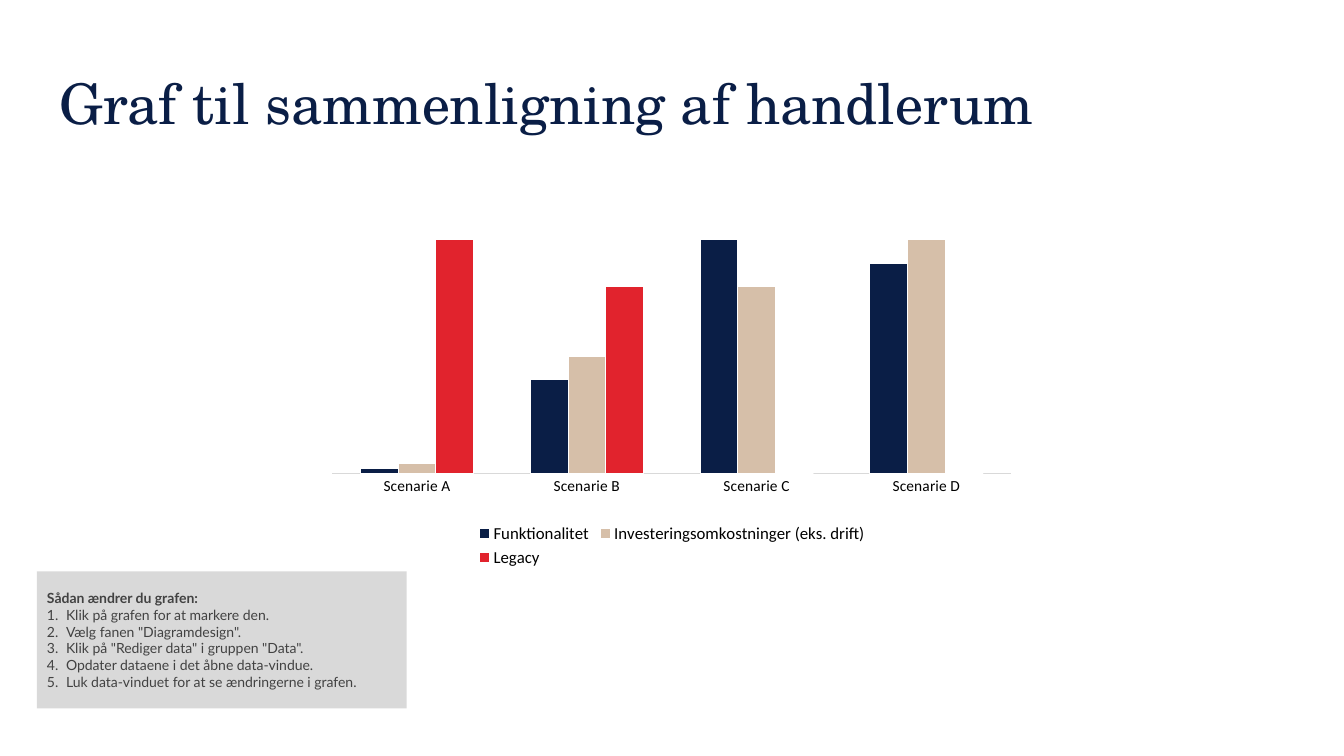
from dataclasses import dataclass

from lxml.etree import SubElement
from pptx import Presentation
from pptx.chart.chart import Chart
from pptx.chart.data import CategoryChartData
from pptx.dml.color import RGBColor
from pptx.dml.fill import FillFormat
from pptx.enum.chart import XL_CHART_TYPE as ChartType
from pptx.enum.chart import XL_LEGEND_POSITION as LegendPos
from pptx.enum.chart import XL_TICK_MARK as TickMark
from pptx.enum.text import MSO_ANCHOR as Anchor
from pptx.enum.text import MSO_AUTO_SIZE as AutoSize
from pptx.enum.text import PP_ALIGN as Align
from pptx.oxml import parse_xml
from pptx.oxml.ns import nsdecls, qn
from pptx.slide import Slide
from pptx.text.text import Font
from pptx.util import Cm, Pt

NAVY = "0A1E46"
SAND = "D6BFA9"
RED = "E1232D"
GREY = "D9D9D9"
DARK_GREY = "424242"
BLACK = "000000"
WHITE = "FFFFFF"


@dataclass
class Box:
    left: float
    top: float
    width: float
    height: float

    def lengths(self) -> tuple[Cm, Cm, Cm, Cm]:
        return Cm(self.left), Cm(self.top), Cm(self.width), Cm(self.height)


@dataclass
class Measure:
    name: str
    values: tuple[int, ...]
    color: str


TITLE_BOX = Box(1.5, 2.01, 30.86, 3)
CHART_BOX = Box(7.16, 3.02, 19.56, 11.38)
GUIDE_BOX = Box(0.93, 14.4, 9.32, 3.45)
PLOT_LAYOUT = {"x": 0.062, "y": 0.162, "w": 0.875, "h": 0.621}

SCENARIOS = [f"Scenarie {letter}" for letter in "ABCD"]
MEASURES = [
    Measure("Funktionalitet", (2, 40, 100, 90), NAVY),
    Measure("Investeringsomkostninger (eks. drift)", (4, 50, 80, 100), SAND),
    Measure("Legacy", (100, 80, 0, 0), RED),
]
GUIDE_HEADING = "Sådan ændrer du grafen:"
GUIDE_STEPS = [
    "Klik på grafen for at markere den.",
    'Vælg fanen "Diagramdesign".',
    'Klik på "Rediger data" i gruppen "Data".',
    "Opdater dataene i det åbne data-vindue.",
    "Luk data-vinduet for at se ændringerne i grafen.",
]


def rgb(color: str) -> RGBColor:
    return RGBColor.from_string(color)


def paint(fill: FillFormat, color: str) -> None:
    fill.solid()
    fill.fore_color.rgb = rgb(color)


def style_font(font: Font, name: str, size: float, color: str, bold: bool = False) -> None:
    font.name = name
    font.size = Pt(size)
    font.bold = bold
    font.color.rgb = rgb(color)


def place(sp, box: Box) -> None:
    sp.left, sp.top, sp.width, sp.height = box.lengths()


def add_title(s: Slide) -> None:
    sp = s.shapes.title
    place(sp, TITLE_BOX)
    tf = sp.text_frame
    tf.text = "Graf til sammenligning af handlerum"
    tf.auto_size = AutoSize.NONE
    tf.vertical_anchor = Anchor.TOP
    tf.margin_left = tf.margin_top = tf.margin_right = tf.margin_bottom = 0
    p = tf.paragraphs[0]
    p.alignment = Align.LEFT
    p.line_spacing = 0.83
    style_font(p.runs[0].font, "TeX Gyre Schola", 40, NAVY)


def set_plot_layout(chart: Chart) -> None:
    plot_area = chart.plots[0]._element.getparent()
    for old in plot_area.findall(qn("c:layout")):
        plot_area.remove(old)
    modes = "".join(f'<c:{key}Mode val="edge"/>' for key in "xy")
    sizes = "".join(f'<c:{key} val="{val}"/>' for key, val in PLOT_LAYOUT.items())
    plot_area.insert(0, parse_xml(
        f'<c:layout {nsdecls("c")}><c:manualLayout><c:layoutTarget val="inner"/>'
        f"{modes}{sizes}</c:manualLayout></c:layout>"
    ))


def add_comparison_chart(s: Slide) -> None:
    data = CategoryChartData()
    data.categories = SCENARIOS
    for measure in MEASURES:
        data.add_series(measure.name, measure.values)
    chart = s.shapes.add_chart(
        ChartType.COLUMN_CLUSTERED, *CHART_BOX.lengths(), data
    ).chart
    chart.has_title = False
    style_font(chart.font, "Calibri", 10, BLACK)

    plot = chart.plots[0]
    plot.gap_width = 150
    plot.overlap = 0
    plot.vary_by_categories = False
    for series, measure in zip(plot.series, MEASURES):
        paint(series.format.fill, measure.color)
        paint(series.format.line.fill, WHITE)
        series.format.line.width = Pt(0.75)

    value_axis = chart.value_axis
    value_axis.minimum_scale = 0
    value_axis.maximum_scale = 120
    value_axis.has_major_gridlines = False
    value_axis.visible = False

    category_axis = chart.category_axis
    category_axis.major_tick_mark = TickMark.NONE
    category_axis.minor_tick_mark = TickMark.NONE
    paint(category_axis.format.line.fill, GREY)
    category_axis.format.line.width = Pt(0.75)
    style_font(category_axis.tick_labels.font, "Calibri", 11, BLACK)

    chart.has_legend = True
    chart.legend.position = LegendPos.BOTTOM
    chart.legend.include_in_layout = False
    style_font(chart.legend.font, "Calibri", 12, BLACK)
    set_plot_layout(chart)


def add_guide(s: Slide) -> None:
    sp = s.placeholders[1]
    place(sp, GUIDE_BOX)
    paint(sp.fill, GREY)
    tf = sp.text_frame
    tf.text = "\n".join([GUIDE_HEADING, *GUIDE_STEPS])
    tf.auto_size = AutoSize.NONE
    tf.vertical_anchor = Anchor.MIDDLE
    for i, p in enumerate(tf.paragraphs):
        is_step = i > 0
        p.alignment = Align.LEFT
        p.space_before = p.space_after = Pt(0)
        style_font(p.runs[0].font, "Lato", 10, DARK_GREY, bold=not is_step)
        pPr = p._p.get_or_add_pPr()
        indent = Cm(0.48) if is_step else 0
        pPr.set("marL", str(indent))
        pPr.set("indent", str(-indent))
        if is_step:
            SubElement(pPr, qn("a:buFontTx"))
            SubElement(pPr, qn("a:buAutoNum")).set("type", "arabicPeriod")
        else:
            SubElement(pPr, qn("a:buNone"))


def main() -> None:
    prs = Presentation()
    prs.slide_width = Cm(33.87)
    prs.slide_height = Cm(19.05)
    s = prs.slides.add_slide(prs.slide_layouts[1])
    paint(s.background.fill, WHITE)
    add_title(s)
    add_comparison_chart(s)
    add_guide(s)
    prs.save("out.pptx")


if __name__ == "__main__":
    main()
